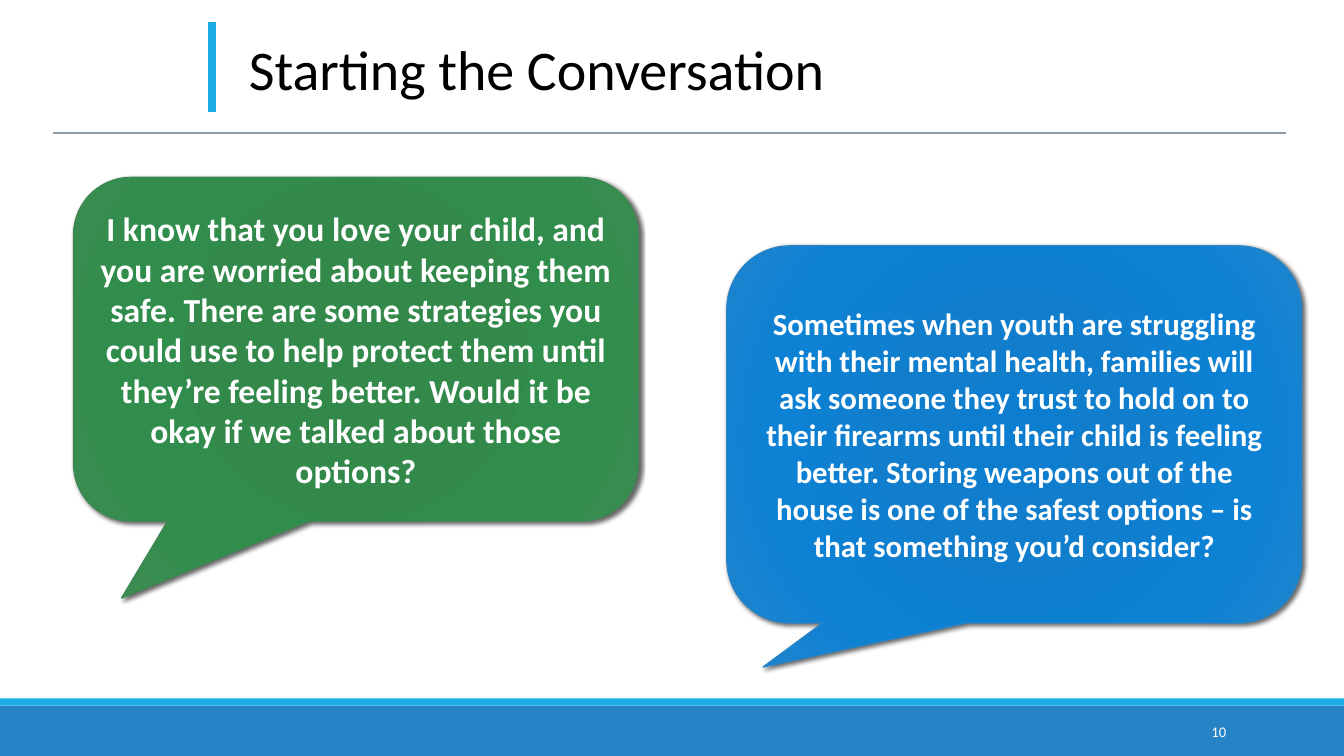
import lxml.etree
import pptx
import pptx.dml.color
import pptx.enum.shapes
import pptx.enum.text
import pptx.oxml
import pptx.oxml.ns
import pptx.util

WIDTH, HEIGHT = 13.33, 7.5
FONT = "Calibri"
SHAPES = pptx.enum.shapes.MSO_SHAPE
ALIGN = pptx.enum.text.PP_ALIGN
ANCHOR = pptx.enum.text.MSO_ANCHOR
NAMESPACE = pptx.oxml.ns.nsdecls("a")

GREEN = ["2F8949", "32894A", "318D4B", "3A8C51"]
BLUE = ["0D7ECF", "117ECD", "0D81D4", "1E84CE"]
STOPS = [0, 34, 70, 100]
WORRIED = (
    "I know that you love your child, and you are worried about keeping them safe. "
    "There are some strategies you could use to help protect them until they’re "
    "feeling better. Would it be okay if we talked about those options?"
)
STORAGE = (
    "Sometimes when youth are struggling with their mental health, families will ask "
    "someone they trust to hold on to their firearms until their child is feeling better. "
    "Storing weapons out of the house is one of the safest options – is that something "
    "you’d consider?"
)


def color(value):
    """Turn a hex string into a colour."""
    return pptx.dml.color.RGBColor.from_string(value)


def inches(*lengths):
    """Convert lengths in inches to slide units."""
    return [pptx.util.Inches(length) for length in lengths]


def write(shape, text, size, ink, align, anchor, bold=False):
    """Write one paragraph into a shape."""
    frame = shape.text_frame
    frame.word_wrap = True
    frame.vertical_anchor = anchor
    paragraph = frame.paragraphs[0]
    paragraph.alignment = align
    run = paragraph.add_run()
    run.text = text
    run.font.name = FONT
    run.font.size = pptx.util.Pt(size)
    run.font.bold = bold
    run.font.color.rgb = color(ink)


def add_rule(slide, start, end, ink, weight):
    """Draw a straight line without a shadow."""
    line = slide.shapes.add_connector(
        pptx.enum.shapes.MSO_CONNECTOR.STRAIGHT, *inches(*start, *end))
    line.line.color.rgb = color(ink)
    line.line.width = pptx.util.Pt(weight)
    lxml.etree.SubElement(line._element.spPr, pptx.oxml.ns.qn("a:effectLst"))


def add_header(slide, left, top, width, height):
    """Place the title, its accent bar and the rule below."""
    accent = left + 1.57
    add_rule(slide, (accent, top + 0.22), (accent, top + 1.11), "1CADE4", 5.5)
    title = slide.shapes.add_textbox(*inches(accent + 0.27, top + 0.29, 8.87, 0.77))
    write(title, "Starting the Conversation", 40, "000000", ALIGN.LEFT, ANCHOR.TOP)
    add_rule(slide, (left, top + height), (left + width, top + height), "8B9BA8", 1.5)


def add_footer(slide, left, top, width, height):
    """Place the two footer bands and the page number."""
    stripe = 0.07
    bands = [(top + stripe, height - stripe, "2683C6"), (top, stripe, "1CADE4")]
    for band_top, band_height, ink in bands:
        band = slide.shapes.add_shape(
            SHAPES.RECTANGLE, *inches(left, band_top, width, band_height))
        band.shadow.inherit = False
        band.fill.solid()
        band.fill.fore_color.rgb = color(ink)
        band.line.fill.background()
    number = slide.shapes.add_textbox(*inches(left + width - 2.5, top + 0.13, 1.43, 0.4))
    write(number, "10", 10.5, "FFFFFF", ALIGN.RIGHT, ANCHOR.MIDDLE)


def add_callout(slide, box, tail, shades, outline, text, size):
    """Place a speech bubble with a radial gradient and a soft shadow."""
    bubble = slide.shapes.add_shape(SHAPES.ROUNDED_RECTANGULAR_CALLOUT, *inches(*box))
    for index, value in enumerate((*tail, 0.167)):
        bubble.adjustments[index] = value
    bubble.line.color.rgb = color(outline)
    bubble.line.width = pptx.util.Pt(1)
    bubble.shadow.inherit = False
    stops = "".join(
        f'<a:gs pos="{stop * 1000}"><a:srgbClr val="{shade}"/></a:gs>'
        for stop, shade in zip(STOPS, shades))
    gradient = pptx.oxml.parse_xml(
        f'<a:gradFill {NAMESPACE} rotWithShape="1"><a:gsLst>{stops}</a:gsLst>'
        '<a:path path="circle"><a:fillToRect l="100000" t="100000" r="100000" b="100000"/>'
        '</a:path></a:gradFill>')
    properties = bubble._element.spPr
    properties.find(pptx.oxml.ns.qn("a:prstGeom")).addnext(gradient)
    shadow = pptx.oxml.parse_xml(
        f'<a:outerShdw {NAMESPACE} blurRad="{pptx.util.Pt(3)}" dist="{pptx.util.Pt(2)}" '
        'dir="2700000" algn="tl" rotWithShape="0"><a:srgbClr val="000000">'
        '<a:alpha val="60000"/></a:srgbClr></a:outerShdw>')
    properties.find(pptx.oxml.ns.qn("a:effectLst")).append(shadow)
    write(bubble, text, size, "FFFFFF", ALIGN.CENTER, ANCHOR.MIDDLE, True)


def main():
    """Build the slide and save it."""
    presentation = pptx.Presentation()
    presentation.slide_width, presentation.slide_height = inches(WIDTH, HEIGHT)
    slide = presentation.slides.add_slide(presentation.slide_layouts[6])
    add_footer(slide, 0, 6.93, WIDTH, HEIGHT - 6.93)
    add_header(slide, 0.53, 0, 12.22, 1.32)
    add_callout(slide, (0.73, 1.76, 5.6, 3.41), (-0.415, 0.724), GREEN, "3E8853", WORRIED, 24)
    add_callout(slide, (7.21, 2.44, 5.7, 3.74), (-0.437, 0.617), BLUE, "2683C6", STORAGE, 22)
    presentation.save("out.pptx")


if __name__ == "__main__":
    main()
